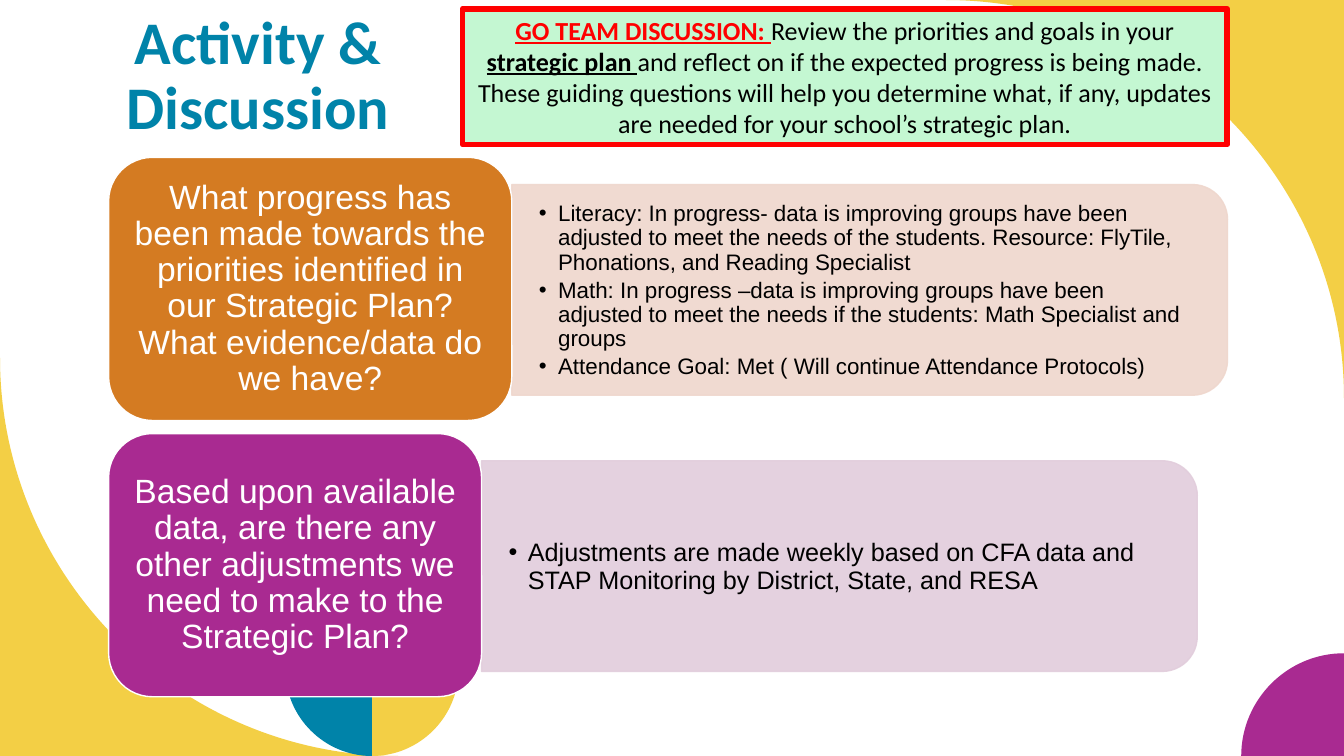
from lxml import etree
from pptx import Presentation
from pptx.dml.color import RGBColor
from pptx.enum.shapes import MSO_SHAPE
from pptx.enum.text import MSO_ANCHOR, MSO_AUTO_SIZE, PP_ALIGN
from pptx.oxml.ns import qn
from pptx.util import Pt

RECTANGLE = MSO_SHAPE.RECTANGLE
ROUNDED = MSO_SHAPE.ROUNDED_RECTANGLE
ROUNDED_END = MSO_SHAPE.ROUND_2_SAME_RECTANGLE
MIDDLE = MSO_ANCHOR.MIDDLE
NO_FIT = MSO_AUTO_SIZE.NONE
CENTER, LEFT = PP_ALIGN.CENTER, PP_ALIGN.LEFT

WIDTH, HEIGHT = 960, 540
ARC_PULL = 0.55
COLORS = {
    "yellow": "F3CF45", "purple": "A92A91", "teal": "0083A9", "orange": "D47B22",
    "peach": "EFD7CD", "lilac": "E2CDDC", "mint": "C4F7D2", "red": "FF0000",
    "black": "000000", "white": "FFFFFF",
}
EMPHASIS = {"bold": True, "underline": True}

PROMPT = [
    ("GO TEAM DISCUSSION: ", "red", EMPHASIS),
    ("Review the priorities and goals in your ", "black", {}),
    ("strategic plan ", "black", EMPHASIS),
    ("and reflect on if the expected progress is being made. These guiding questions will help "
     "you determine what, if any, updates are needed for your school’s strategic plan.", "black", {}),
]
TOPICS = [
    {
        "question": "What progress has been made towards the priorities identified in our "
                    "Strategic Plan? What evidence/data do we have?",
        "answers": [
            "Literacy: In progress- data is improving groups have been adjusted to meet the needs "
            "of the students. Resource: FlyTile, Phonations, and Reading Specialist",
            "Math: In progress –data is improving groups have been adjusted to meet the needs if "
            "the students: Math Specialist and groups",
            "Attendance Goal: Met ( Will continue Attendance Protocols)",
        ],
        "question_width": 288, "answer_size": 16, "strong": "orange", "pale": "peach",
    },
    {
        "question": "Based upon available data, are there any other adjustments we need to make "
                    "to the Strategic Plan?",
        "answers": ["Adjustments are made weekly based on CFA data and STAP Monitoring by "
                    "District, State, and RESA"],
        "question_width": 266.4, "answer_size": 18, "strong": "purple", "pale": "lilac",
    },
]


def rgb(name):
    return RGBColor.from_string(COLORS[name])


def apply(target, formats):
    for attribute, value in formats.items():
        setattr(target, attribute, value)


def paint(shape, fill, line=None, weight=1):
    shape.shadow.inherit = False
    shape.fill.solid()
    shape.fill.fore_color.rgb = rgb(fill)
    if line:
        shape.line.color.rgb = rgb(line)
        shape.line.width = Pt(weight)
    else:
        shape.line.fill.background()


def set_frame(frame, inset_x=7.2, inset_y=3.6):
    apply(frame, {
        "word_wrap": True, "auto_size": NO_FIT, "vertical_anchor": MIDDLE,
        "margin_left": Pt(inset_x), "margin_right": Pt(inset_x),
        "margin_top": Pt(inset_y), "margin_bottom": Pt(inset_y),
    })


def write(paragraph, runs, size, font, align=CENTER, spacing=0.9):
    apply(paragraph, {"alignment": align, "line_spacing": spacing})
    for words, color, formats in runs:
        run = paragraph.add_run()
        run.text = words
        apply(run.font, {"size": Pt(size), "name": font, "bold": False, **formats})
        run.font.color.rgb = rgb(color)


def quarter_arc(start, corner, end):
    controls = [tuple(p + ARC_PULL * (c - p) for p, c in zip(point, corner))
                for point in (start, end)]
    return [start, *controls, end]


def draw_outline(slide, pieces, fill):
    points = [(x * 100, y * 100) for piece in pieces for x, y in piece]
    builder = slide.shapes.build_freeform(*points[0], scale=Pt(0.01))
    builder.add_line_segments(points[1:], close=True)
    outline = builder.convert_to_shape()
    paint(outline, fill)
    steps = list(next(outline._element.iter(qn("a:moveTo"))).getparent())
    first = 0
    for piece in pieces:
        if len(piece) == 4:
            curve = etree.Element(qn("a:cubicBezTo"))
            steps[first + 1].addprevious(curve)
            for step in steps[first + 1:first + 4]:
                curve.append(step[0])
                step.getparent().remove(step)
        first += len(piece)


def draw_background(slide, width, height):
    sweep, dot, leaf, stem = 284.4, 73.4, 61.9, 265.7
    quarters = [
        ((width, 0), (width, sweep), (width, 0), (width - sweep, 0), "yellow"),
        ((0, height), (0, height - sweep), (0, height), (sweep, height), "yellow"),
        ((width, height), (width, height - dot), (width - dot, height - dot),
         (width - dot, height), "purple"),
    ]
    for tip, start, corner, end, fill in quarters:
        draw_outline(slide, [[tip], quarter_arc(start, corner, end)], fill)
    rise, top = height - 38.2, height - 100.1
    for side, fill in ((1, "yellow"), (-1, "teal")):
        edge = stem + side * leaf
        outer = quarter_arc((edge, height - leaf), (edge, height), (stem, height))
        inner = quarter_arc((stem, rise), (stem, top), (edge, top))
        draw_outline(slide, [outer, inner], fill)


def draw_title(slide, left, top, width, height):
    title = slide.shapes.title
    apply(title, {"left": Pt(left), "top": Pt(top), "width": Pt(width), "height": Pt(height)})
    set_frame(title.text_frame)
    write(title.text_frame.paragraphs[0],
          [("Activity & Discussion", "teal", {"bold": True})], 43.2, "Calibri")


def draw_prompt(slide, left, top, width, height):
    prompt = slide.shapes.add_shape(RECTANGLE, Pt(left), Pt(top), Pt(width), Pt(height))
    paint(prompt, "mint", "red", 4)
    set_frame(prompt.text_frame)
    write(prompt.text_frame.paragraphs[0], PROMPT, 18.6, "Calibri", spacing=1.0)


def add_bullet(paragraph):
    properties = paragraph._p.get_or_add_pPr()
    properties.set("marL", str(Pt(13.7)))
    properties.set("indent", str(Pt(-13.7)))
    etree.SubElement(properties, qn("a:buFont")).set("typeface", "Arial")
    etree.SubElement(properties, qn("a:buChar")).set("char", "•")


def draw_answers(slide, topic, left, top, width, height):
    panel = slide.shapes.add_shape(
        ROUNDED_END, Pt(left + (width - height) / 2), Pt(top + (height - width) / 2),
        Pt(height), Pt(width))
    panel.rotation = 90
    paint(panel, topic["pale"], topic["pale"])
    for color in panel._element.spPr.iter(qn("a:srgbClr")):
        etree.SubElement(color, qn("a:alpha")).set("val", "90000")

    answers = slide.shapes.add_textbox(Pt(left), Pt(top + 8), Pt(width - 7.2), Pt(height - 14.4))
    frame = answers.text_frame
    set_frame(frame, 19.4, 10.1)
    for i, answer in enumerate(topic["answers"]):
        paragraph = frame.add_paragraph() if i else frame.paragraphs[0]
        write(paragraph, [(answer, "black", {})], topic["answer_size"], "Arial", LEFT)
        paragraph.space_after = Pt(2.8)
        add_bullet(paragraph)


def draw_topic(slide, topic, left, top, height):
    width = topic["question_width"]
    draw_answers(slide, topic, left + width, top + 19.4, 511.2, 150.5)
    question = slide.shapes.add_shape(ROUNDED, Pt(left), Pt(top), Pt(width), Pt(height))
    paint(question, topic["strong"], "white")
    set_frame(question.text_frame)
    write(question.text_frame.paragraphs[0], [(topic["question"], "white", {})], 24, "Arial")


def main():
    deck = Presentation()
    deck.slide_width, deck.slide_height = Pt(WIDTH), Pt(HEIGHT)
    slide = deck.slides.add_slide(deck.slide_layouts[5])
    draw_background(slide, WIDTH, HEIGHT)
    draw_title(slide, 41.8, 6.8, 285, 97)
    draw_prompt(slide, 330.4, 6.3, 546.3, 97)
    for row, topic in enumerate(TOPICS):
        draw_topic(slide, topic, 77.6, 112.4 + row * 197.3, 188)
    deck.save("out.pptx")


if __name__ == "__main__":
    main()
